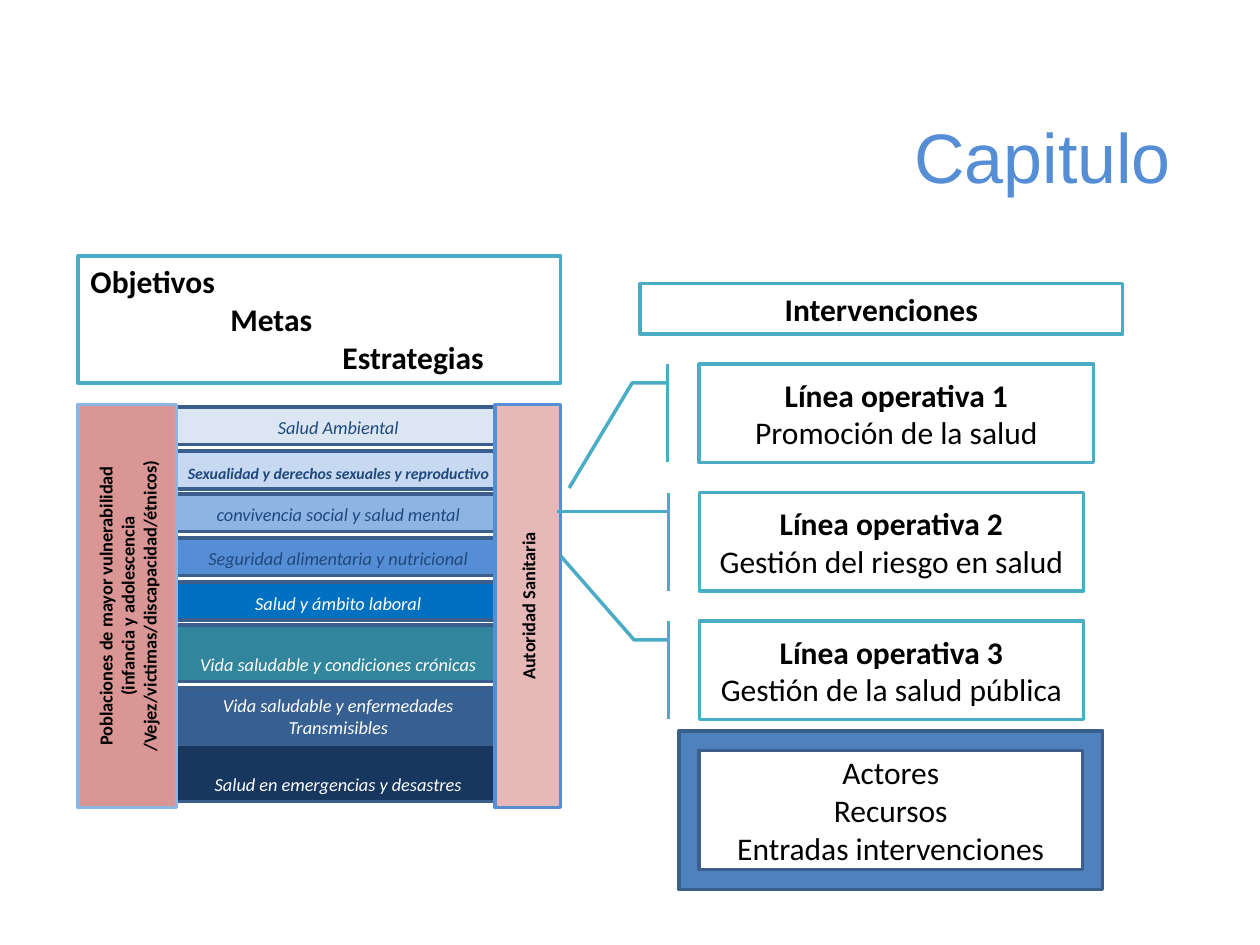
from dataclasses import dataclass

from pptx import Presentation
from pptx.dml.color import RGBColor
from pptx.enum.shapes import MSO_SHAPE
from pptx.enum.text import MSO_ANCHOR, PP_ALIGN
from pptx.util import Inches, Pt


@dataclass(frozen=True)
class Theme:
    heading_font: str = "Arial"
    body_font: str = "Calibri"
    title_size: float = 40
    body_size: float = 18
    label_size: float = 10.5
    small_size: float = 9
    line_width: float = 2
    title: str = "558ED5"
    black: str = "000000"
    white: str = "FFFFFF"
    navy: str = "1F497D"
    teal: str = "4BACC6"
    band_line: str = "3A5F8C"
    frame: str = "4F81BD"
    rose: str = "D99694"
    pale_rose: str = "E6B9B8"
    sky: str = "8EB4E3"


class SlideBuilder:
    def __init__(self, slide, theme):
        self.slide = slide
        self.theme = theme

    def set_text(self, shape, lines, size, color, font=None, bold=(), italic=False,
                 align=PP_ALIGN.CENTER, anchor=MSO_ANCHOR.MIDDLE):
        """Fill a shape with lines; bold holds the indexes of bold lines."""
        text_frame = shape.text_frame
        text_frame.word_wrap = True
        text_frame.vertical_anchor = anchor
        text_frame.text = "\n".join(lines)
        for index, paragraph in enumerate(text_frame.paragraphs):
            paragraph.alignment = align
            for run in paragraph.runs:
                run.font.name = font or self.theme.body_font
                run.font.size = Pt(size)
                run.font.bold = index in bold
                run.font.italic = italic
                run.font.color.rgb = RGBColor.from_string(color)

    def title(self, text, left, top, width, height):
        box = self.slide.shapes.add_textbox(
            Inches(left), Inches(top), Inches(width), Inches(height))
        self.set_text(box, [text], self.theme.title_size, self.theme.title,
                      font=self.theme.heading_font, align=PP_ALIGN.RIGHT)

    def shape(self, left, top, width, height, fill, line, kind=MSO_SHAPE.RECTANGLE):
        shape = self.slide.shapes.add_shape(
            kind, Inches(left), Inches(top), Inches(width), Inches(height))
        shape.shadow.inherit = False
        shape.fill.solid()
        shape.fill.fore_color.rgb = RGBColor.from_string(fill)
        shape.line.color.rgb = RGBColor.from_string(line)
        shape.line.width = Pt(self.theme.line_width)
        return shape

    def heading(self, lines, left, top, width, height, align, indents=(0,)):
        box = self.shape(left, top, width, height, self.theme.white, self.theme.teal)
        self.set_text(box, lines, self.theme.body_size, self.theme.black,
                      bold=range(len(lines)), align=align, anchor=MSO_ANCHOR.TOP)
        for paragraph, indent in zip(box.text_frame.paragraphs, indents):
            properties = paragraph._p.get_or_add_pPr()
            properties.set("marL", str(Inches(indent)))
            properties.set("indent", "0")

    def band(self, text, top, height, fill, color, size, bold):
        band = self.shape(1.38, top, 2.61, height, fill, self.theme.band_line)
        self.set_text(band, [text], size, color, bold=(0,) if bold else (),
                      italic=True, anchor=MSO_ANCHOR.BOTTOM)

    def pillar(self, lines, left, width, fill, line):
        pillar = self.shape(left, 3.21, width, 3.2, fill, line)
        self.set_text(pillar, lines, self.theme.label_size, self.theme.black,
                      bold=range(len(lines)))
        pillar.text_frame._txBody.bodyPr.set("vert", "vert270")

    def callout(self, lines, top, width, tip_y, tip_x):
        callout = self.shape(5.55, top, width, 0.78, self.theme.white, self.theme.teal,
                             MSO_SHAPE.LINE_CALLOUT_2_BORDER_AND_ACCENT_BAR)
        for index, value in enumerate((0.19, -0.08, 0.19, -0.17, tip_y, tip_x)):
            callout.adjustments[index] = value
        self.set_text(callout, lines, self.theme.body_size, self.theme.black, bold=(0,))

    def frame(self, lines, left, top, width, height):
        frame = self.shape(left, top, width, height, self.theme.frame,
                           self.theme.band_line, MSO_SHAPE.FRAME)
        self.set_text(frame, lines, self.theme.body_size, self.theme.black)


def main():
    presentation = Presentation()
    presentation.slide_width = Inches(10)
    presentation.slide_height = Inches(7.5)
    slide = presentation.slides.add_slide(presentation.slide_layouts[6])
    theme = Theme()
    builder = SlideBuilder(slide, theme)

    builder.title("Capitulo", 4.02, 0.6, 5.37, 1.27)

    # Stacked health dimensions: text, top, height, fill, text colour
    bands = [
        ("Salud Ambiental", 3.23, 0.3, "DCE6F2", theme.navy),
        ("Sexualidad y derechos sexuales y reproductivo", 3.58, 0.3, "C6D9F1", theme.navy),
        ("convivencia social y salud mental", 3.92, 0.3, "8EB4E3", theme.navy),
        ("Seguridad alimentaria y nutricional", 4.27, 0.3, "558ED5", theme.navy),
        ("Salud y ámbito laboral", 4.62, 0.3, "0070C0", theme.white),
        ("Vida saludable y condiciones crónicas", 4.96, 0.45, "31859C", theme.white),
        ("Vida saludable y enfermedades Transmisibles", 5.46, 0.45, "376092", theme.white),
        ("Salud en emergencias y desastres", 5.91, 0.45, "17375E", theme.white),
    ]
    for index, band in enumerate(bands):
        emphasised = index == 1
        size = theme.small_size if emphasised else theme.label_size
        builder.band(*band, size, emphasised)

    # Pillars on both sides of the bands
    builder.pillar(["Poblaciones de mayor vulnerabilidad",
                    "(infancia y adolescencia /Vejez/victimas/discapacidad/étnicos)"],
                   0.62, 0.78, theme.rose, theme.sky)
    builder.pillar(["Autoridad Sanitaria"], 3.93, 0.52, theme.pale_rose, theme.title)

    # Operative lines: text, width, pointer tip (y, x)
    callouts = [
        ("Promoción de la salud", 3.13, 1.26, -0.33),
        ("Gestión del riesgo en salud", 3.05, 0.19, -0.37),
        ("Gestión de la salud pública", 3.05, -0.66, -0.36),
    ]
    for index, (text, width, tip_y, tip_x) in enumerate(callouts):
        builder.callout([f"Línea operativa {index + 1}", text],
                        2.89 + index * 1.02, width, tip_y, tip_x)

    # Headings and the closing frame
    builder.heading(["Objetivos", "Metas", "Estrategias"], 0.62, 2.03, 3.83, 1.01,
                    PP_ALIGN.LEFT, indents=(0, 1.11, 2))
    builder.frame(["Actores", "Recursos", "Entradas intervenciones"],
                  5.39, 5.8, 3.36, 1.26)
    builder.heading(["Intervenciones"], 5.08, 2.25, 3.83, 0.4, PP_ALIGN.CENTER)

    presentation.save("out.pptx")


if __name__ == "__main__":
    main()
